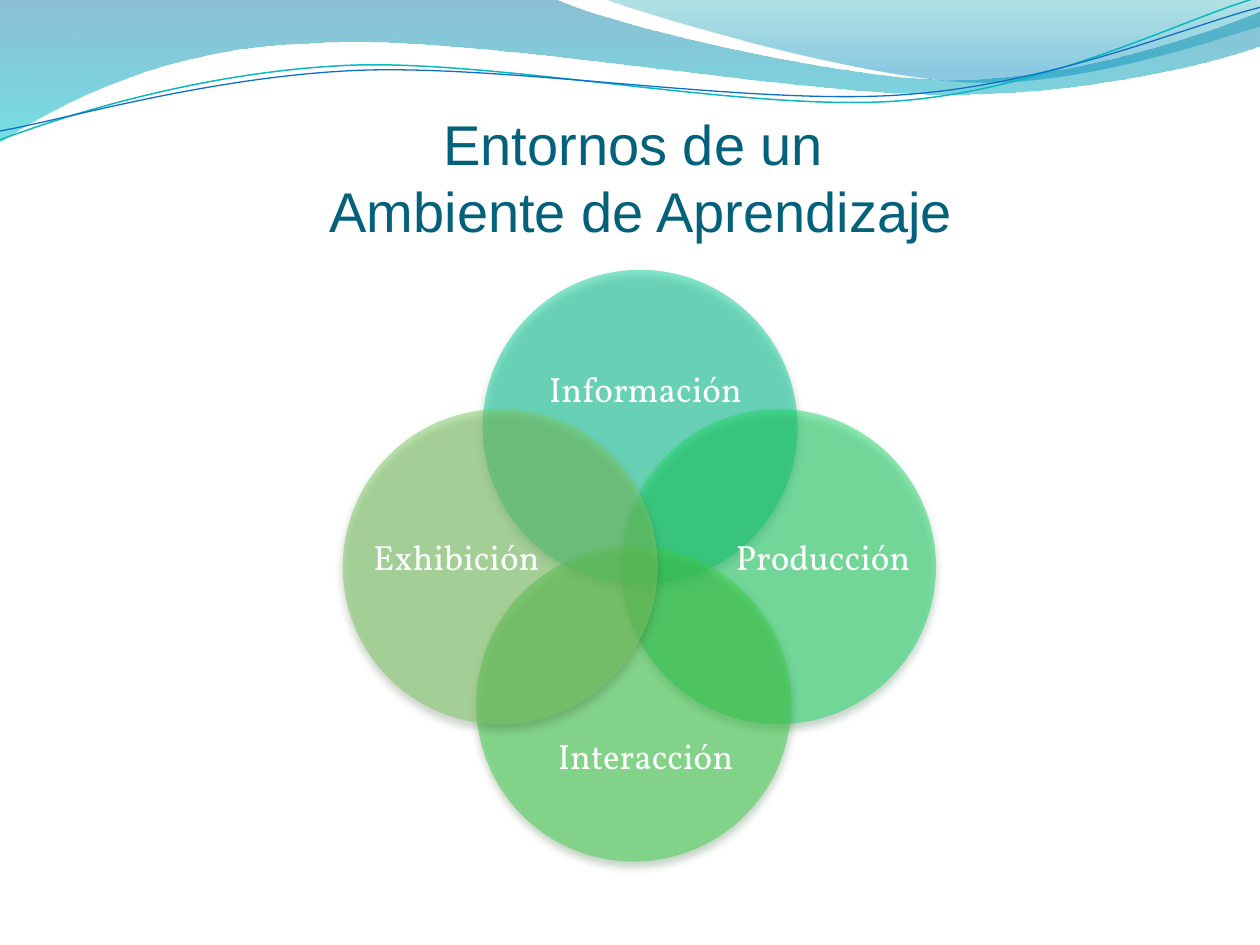
"""Build a slide with four overlapping circles for the settings of a learning environment."""
import dataclasses

import lxml.etree
import pptx
import pptx.dml.color
import pptx.enum.shapes
import pptx.enum.text
import pptx.oxml.ns
import pptx.util

Cm = pptx.util.Cm
Pt = pptx.util.Pt
qn = pptx.oxml.ns.qn
rgb = pptx.dml.color.RGBColor.from_string


@dataclasses.dataclass(frozen=True)
class Theme:
    title_font: str = "Arial"
    label_font: str = "Vollkorn"
    title_size: int = 32
    label_size: int = 20
    title_color: str = "04617B"
    label_color: str = "FFFFFF"
    band_colors: tuple = (("0074A1", "00C6CF"), ("00A1A9", "008BBF"))
    band_opacity: tuple = ((45, 55), (30, 45))
    band_stops: tuple = ((0, 1), (0, 0.8))
    strand_colors: tuple = ("0AB8BF", "0F6FC6")
    strand_widths: tuple = (0.85, 0.75)
    circle_opacity: int = 50
    shadow_opacity: int = 48


theme = Theme()


def write_text(frame, text, *, font, size, color, anchor):
    frame.word_wrap = True
    frame.vertical_anchor = anchor
    paragraph = frame.paragraphs[0]
    paragraph.alignment = pptx.enum.text.PP_ALIGN.CENTER
    for index, line in enumerate(text.splitlines()):
        if index:
            paragraph.add_line_break()
        run = paragraph.add_run()
        run.text = line
        run.font.name = font
        run.font.size = Pt(size)
        run.font.color.rgb = rgb(color)


def set_opacity(element, percents):
    for color, percent in zip(element.iter(qn("a:srgbClr")), percents):
        lxml.etree.SubElement(color, qn("a:alpha"), val=str(percent * 1000))


deck = pptx.Presentation()
deck.slide_width = Cm(25.4)
deck.slide_height = Cm(19.05)
slide = deck.slides.add_slide(deck.slide_layouts[5])
shapes = slide.shapes

bands = [
    [(0, 0), [(11.18, -0.03)],
     [(12.09, 0.43), (16.87, 1.6), (19.25, 1.6)],
     [(21.67, 1.6), (24.33, 0.66), (25.4, 0.23)],
     [(25.43, 0.91)],
     [(24.97, 1.12), (22.1, 1.93), (18.95, 1.9)],
     [(15.8, 1.9), (9.7, 0.71), (6.53, 0.86)],
     [(3.28, 0.91), (1.17, 2.11), (-0.03, 2.87)]],
    [(12.17, -0.03),
     [(12.93, 0.28), (17.32, 1.57), (19.53, 1.65)],
     [(21.74, 1.75), (24.41, 0.81), (25.4, 0.53)],
     [(25.4, 0)]],
]
strands = [
    [(-0.05, 2.22),
     [(1.19, 1.82), (4.02, 1.04), (7.05, 1.05)],
     [(10.05, 1.07), (15.02, 2.37), (18.08, 2.29)],
     [(21.13, 2.2), (23.87, 0.91), (25.41, 0.55)]],
    [(-0.04, 2.04),
     [(1.16, 1.9), (4.18, 1.15), (7.2, 1.16)],
     [(10.25, 1.18), (15.13, 2.25), (18.18, 2.17)],
     [(21.21, 2.1), (23.93, 1.06), (25.45, 0.75)]],
]
strand_rotation = 357.3

waves = []
for start, *segments in bands + strands:
    builder = shapes.build_freeform(Cm(start[0]), Cm(start[1]))
    builder.add_line_segments(
        [(Cm(x), Cm(y)) for segment in segments for x, y in segment],
        close=len(waves) < len(bands),
    )
    wave = builder.convert_to_shape()
    wave.shadow.inherit = False
    steps = iter(list(wave.element.iter(qn("a:lnTo"))))
    for segment in segments:
        segment_steps = [next(steps) for point in segment]
        if len(segment) == 3:
            curve = lxml.etree.Element(qn("a:cubicBezTo"))
            segment_steps[0].addprevious(curve)
            for step in segment_steps:
                curve.append(step[0])
                step.getparent().remove(step)
    waves.append(wave)

for band, colors, opacity, positions in zip(
    waves, theme.band_colors, theme.band_opacity, theme.band_stops
):
    band.fill.gradient()
    band.fill.gradient_angle = 270
    for stop, color, position in zip(band.fill.gradient_stops, colors, positions):
        stop.color.rgb = rgb(color)
        stop.position = position
    set_opacity(band.element, opacity)
    band.line.fill.background()

for strand, color, width in zip(waves[len(bands):], theme.strand_colors, theme.strand_widths):
    strand.rotation = strand_rotation
    strand.fill.background()
    strand.line.color.rgb = rgb(color)
    strand.line.width = Pt(width)

title = shapes.title
title.element.getparent().append(title.element)
title.left, title.top, title.width, title.height = Cm(1.5), Cm(1.73), Cm(22.86), Cm(3.18)
title.text_frame.margin_left = title.text_frame.margin_right = title.text_frame.margin_bottom = 0
write_text(
    title.text_frame,
    """Entornos de un 
Ambiente de Aprendizaje""",
    font=theme.title_font, size=theme.title_size, color=theme.title_color,
    anchor=pptx.enum.text.MSO_ANCHOR.BOTTOM,
)

settings = [
    ("Información", "10CF9B", "044A37", (9.73, 5.44), (10.31, 7.14)),
    ("Producción", "21D86A", "0A4D25", (12.52, 8.25), (13.89, 10.52)),
    ("Interacción", "41D24C", "154B19", (9.6, 11.02), (10.31, 14.53)),
    ("Exhibición", "7CCA62", "2B4821", (6.91, 8.25), (6.5, 10.52)),
]
diameter = Cm(6.35)
for name, color, shadow_color, (left, top), label_place in settings:
    circle = shapes.add_shape(
        pptx.enum.shapes.MSO_SHAPE.OVAL, Cm(left), Cm(top), diameter, diameter
    )
    circle.fill.solid()
    circle.fill.fore_color.rgb = rgb(color)
    set_opacity(circle.element, [theme.circle_opacity])
    circle.line.fill.background()
    circle.shadow.inherit = False
    effects = circle.element.spPr.find(qn("a:effectLst"))
    shadow = lxml.etree.SubElement(
        effects, qn("a:outerShdw"), blurRad=str(Pt(4.5)), dist=str(Pt(3)),
        dir="5400000", rotWithShape="0",
    )
    lxml.etree.SubElement(shadow, qn("a:srgbClr"), val=shadow_color)
    set_opacity(shadow, [theme.shadow_opacity])

for name, color, shadow_color, circle_place, (left, top) in settings:
    label = shapes.add_textbox(Cm(left), Cm(top), Cm(5.41), Cm(1.4))
    write_text(
        label.text_frame, name,
        font=theme.label_font, size=theme.label_size, color=theme.label_color,
        anchor=pptx.enum.text.MSO_ANCHOR.MIDDLE,
    )

deck.save("out.pptx")
